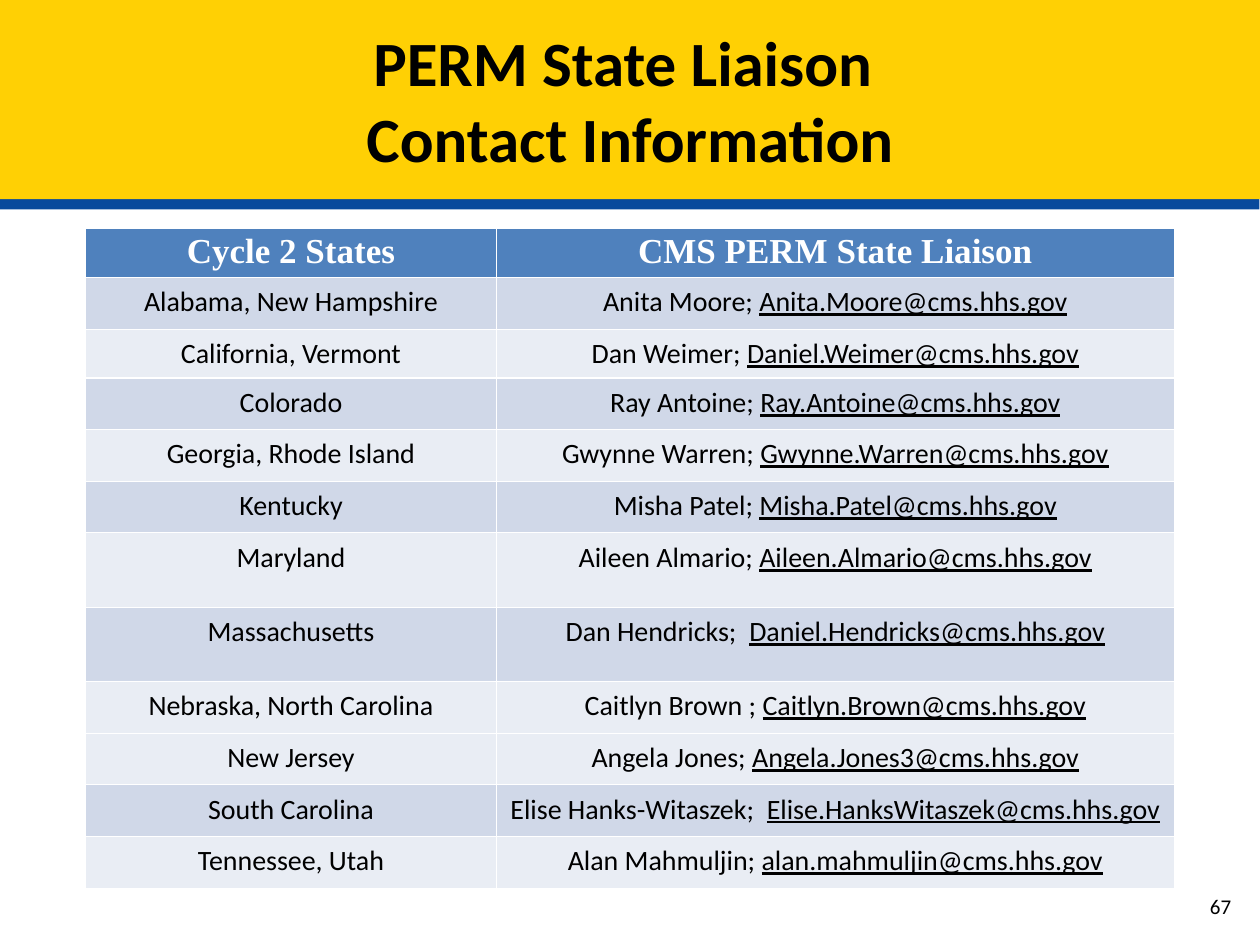
from dataclasses import dataclass

from lxml.etree import SubElement
from pptx import Presentation
from pptx.dml.color import RGBColor
from pptx.enum.text import MSO_ANCHOR, PP_ALIGN
from pptx.oxml.ns import qn
from pptx.util import Inches, Pt

COLORS = {
    "gold": "FFD004",
    "navy": "084A9C",
    "header": "4F81BD",
    "dark": "D0D8E8",
    "light": "E9EDF4",
    "black": "000000",
    "white": "FFFFFF",
}


@dataclass(frozen=True)
class Liaison:
    states: str
    name: str
    email: str
    band: str
    height: float = 0.41


LIAISONS = [
    Liaison("Alabama, New Hampshire", "Anita Moore; ", "Anita.Moore@cms.hhs.gov", "dark"),
    Liaison("California, Vermont", "Dan Weimer; ", "Daniel.Weimer@cms.hhs.gov", "light", 0.38),
    Liaison("Colorado", "Ray Antoine; ", "Ray.Antoine@cms.hhs.gov", "dark"),
    Liaison("Georgia, Rhode Island", "Gwynne Warren; ", "Gwynne.Warren@cms.hhs.gov", "light"),
    Liaison("Kentucky", "Misha Patel; ", "Misha.Patel@cms.hhs.gov", "dark"),
    Liaison("Maryland", "Aileen Almario; ", "Aileen.Almario@cms.hhs.gov", "light", 0.59),
    Liaison("Massachusetts", "Dan Hendricks;  ", "Daniel.Hendricks@cms.hhs.gov", "dark", 0.59),
    Liaison("Nebraska, North Carolina", "Caitlyn Brown ; ", "Caitlyn.Brown@cms.hhs.gov", "light"),
    Liaison("New Jersey", "Angela Jones; ", "Angela.Jones3@cms.hhs.gov", "light"),
    Liaison("South Carolina", "Elise Hanks-Witaszek;  ", "Elise.HanksWitaszek@cms.hhs.gov", "dark"),
    Liaison("Tennessee, Utah", "Alan Mahmuljin; ", "alan.mahmuljin@cms.hhs.gov", "light"),
]
HEADINGS = ["Cycle 2 States", "CMS PERM State Liaison"]
HEADER_HEIGHT = 0.39
COLUMN_WIDTHS = [3.26, 5.38]


def rgb(color: str) -> RGBColor:
    return RGBColor.from_string(COLORS[color])


def add_run(paragraph, text: str, size: int, color: str = "black",
            font: str = "Calibri", bold: bool = False, underline: bool = False) -> None:
    run = paragraph.add_run()
    run.text = text
    run.font.name = font
    run.font.size = Pt(size)
    run.font.bold = bold
    run.font.underline = underline
    run.font.color.rgb = rgb(color)


def add_band_shadow(shape) -> None:
    effects = SubElement(shape._element.spPr, qn("a:effectLst"))
    shadow = SubElement(effects, qn("a:outerShdw"), blurRad="0", dist=str(Pt(6)),
                        dir=str(94 * 60000), algn="ctr", rotWithShape="0")
    SubElement(shadow, qn("a:srgbClr"), val=COLORS["navy"])


def add_title(slide) -> None:
    title = slide.shapes.title
    title.left, title.top = Inches(0), Inches(0)
    title.width, title.height = Inches(10), Inches(1.58)
    title.fill.solid()
    title.fill.fore_color.rgb = rgb("gold")
    add_band_shadow(title)
    title.text_frame.vertical_anchor = MSO_ANCHOR.MIDDLE
    heading = title.text_frame.paragraphs[0]
    heading.alignment = PP_ALIGN.CENTER
    add_run(heading, "PERM State Liaison ", 36, bold=True)
    heading.add_line_break()
    add_run(heading, "Contact Information", 36, bold=True)


def add_page_number(slide) -> None:
    page = slide.shapes.add_textbox(Inches(9.48), Inches(6.99), Inches(0.39), Inches(0.4))
    page.text_frame.word_wrap = True
    page.text_frame.vertical_anchor = MSO_ANCHOR.MIDDLE
    number = page.text_frame.paragraphs[0]
    number.alignment = PP_ALIGN.RIGHT
    add_run(number, "67", 12)


def format_cell(cell, fill: str, vertical_margin: float):
    cell.margin_left = cell.margin_right = Inches(0.06)
    cell.margin_top = cell.margin_bottom = Inches(vertical_margin)
    for side in ("lnL", "lnR", "lnT", "lnB"):
        border = SubElement(cell._tc.get_or_add_tcPr(), qn(f"a:{side}"), w=str(Pt(0.75)))
        line_fill = SubElement(border, qn("a:solidFill"))
        SubElement(line_fill, qn("a:srgbClr"), val=COLORS["white"])
    cell.fill.solid()
    cell.fill.fore_color.rgb = rgb(fill)
    paragraph = cell.text_frame.paragraphs[0]
    paragraph.alignment = PP_ALIGN.CENTER
    return paragraph


def add_liaison_table(slide) -> None:
    heights = [HEADER_HEIGHT] + [liaison.height for liaison in LIAISONS]
    table = slide.shapes.add_table(
        len(heights), len(COLUMN_WIDTHS), Inches(0.68), Inches(1.81),
        Inches(sum(COLUMN_WIDTHS)), Inches(sum(heights))).table
    table.horz_banding = False
    for column, width in zip(table.columns, COLUMN_WIDTHS):
        column.width = Inches(width)
    for row, height in zip(table.rows, heights):
        row.height = Inches(height)
    for column, heading in enumerate(HEADINGS):
        paragraph = format_cell(table.cell(0, column), "header", 0.03)
        add_run(paragraph, heading, 20, "white", "Times New Roman", bold=True)
    for row, liaison in enumerate(LIAISONS, start=1):
        states = format_cell(table.cell(row, 0), liaison.band, 0.06)
        add_run(states, liaison.states, 16)
        contact = format_cell(table.cell(row, 1), liaison.band, 0.06)
        add_run(contact, liaison.name, 16)
        add_run(contact, liaison.email, 16, underline=True)


def main() -> None:
    presentation = Presentation()
    presentation.slide_width, presentation.slide_height = Inches(10), Inches(7.5)
    slide = presentation.slides.add_slide(presentation.slide_layouts[5])
    add_title(slide)
    add_page_number(slide)
    add_liaison_table(slide)
    presentation.save("out.pptx")


if __name__ == "__main__":
    main()
